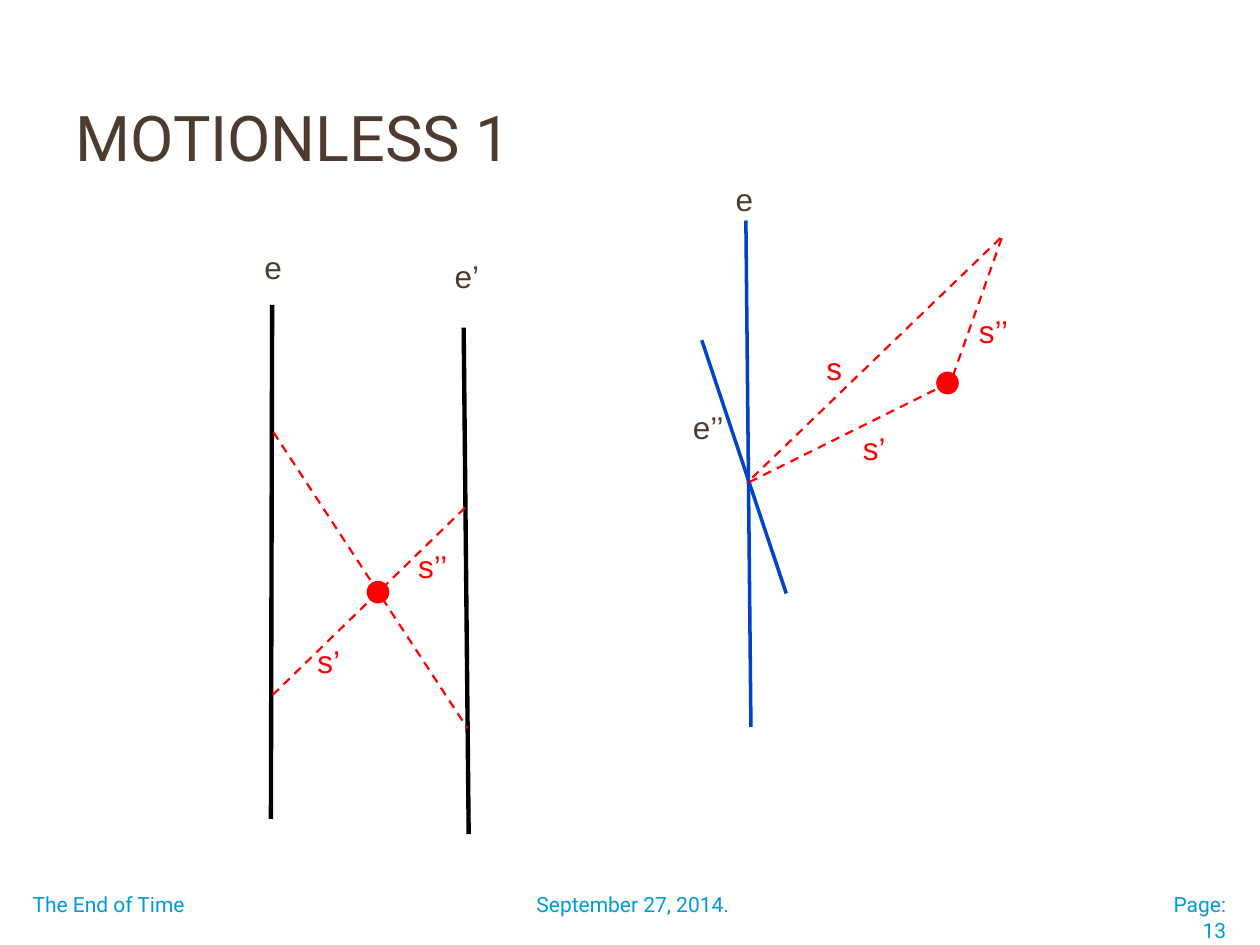
from typing import NamedTuple

from lxml import etree
from pptx import Presentation
from pptx.dml.color import RGBColor
from pptx.enum.dml import MSO_LINE
from pptx.enum.shapes import MSO_CONNECTOR, MSO_SHAPE
from pptx.enum.text import MSO_ANCHOR, PP_ALIGN
from pptx.oxml.ns import qn
from pptx.util import Inches, Pt

STRAIGHT = MSO_CONNECTOR.STRAIGHT
ELLIPSE = MSO_SHAPE.OVAL
DASH = MSO_LINE.DASH
LEFT, RIGHT = PP_ALIGN.LEFT, PP_ALIGN.RIGHT
MIDDLE, TOP = MSO_ANCHOR.MIDDLE, MSO_ANCHOR.TOP

COLORS = {"brown": "4E3B30", "sky": "009BD4", "red": "FF0000",
          "black": "000000", "blue": "0042C8"}

# The slide is a grid of 100 columns by 75 rows
COLUMNS, ROWS = 100, 75
CELL = Inches(0.1)
LABEL_WIDTH, LABEL_HEIGHT = 5.5, 4
DOT_SIZE = 1.8
FOOTER_TOP, FOOTER_HEIGHT = 70.3, 3.2


class LineStyle(NamedTuple):
    color: str
    width: float
    dashed: bool = False


class Segment(NamedTuple):
    style: LineStyle
    start: tuple[float, float]
    end: tuple[float, float]


class Label(NamedTuple):
    text: str
    column: float
    row: float
    color: str


class Footer(NamedTuple):
    text: str
    column: float
    width: float
    align: PP_ALIGN = LEFT


BLACK_EDGE = LineStyle("black", 2.5)
BLUE_EDGE = LineStyle("blue", 2)
SIGNAL = LineStyle("red", 1.25, dashed=True)

SEGMENTS = [
    # Left diagram: two edges and the crossing signals
    Segment(BLACK_EDGE, (21.6, 24.2), (21.5, 65)),
    Segment(BLACK_EDGE, (36.8, 26), (37.2, 66.2)),
    Segment(SIGNAL, (36.9, 40.3), (21.6, 55.2)),
    Segment(SIGNAL, (21.7, 34.3), (37.1, 57.8)),
    # Right diagram: crossing edges and the signal triangle
    Segment(BLUE_EDGE, (59.2, 17.5), (59.6, 57.7)),
    Segment(BLUE_EDGE, (55.7, 27), (62.4, 47.1)),
    Segment(SIGNAL, (79.5, 18.9), (75.5, 30.2)),
    Segment(SIGNAL, (75.3, 30.4), (59.4, 38.3)),
    Segment(SIGNAL, (79.4, 18.9), (59.3, 38.3)),
]
DOTS = [(29.1, 46.1), (74.3, 29.5)]
LABELS = [
    Label("e", 20, 19.2, "brown"),
    Label("e’", 35.1, 19.9, "brown"),
    Label("s’", 24.2, 50.5, "red"),
    Label("s’’", 32.2, 42.9, "red"),
    Label("e", 57.4, 13.8, "brown"),
    Label("e’’", 54, 31.9, "brown"),
    Label("s", 64.6, 27.2, "red"),
    Label("s’", 67.5, 33.6, "red"),
    Label("s’’", 76.7, 24.3, "red"),
]
FOOTERS = [
    Footer("The End of Time", 1.6, 39.1),
    Footer("September 27, 2014.", 41.6, 44.3),
    Footer("Page: 13", 90, 8.3, RIGHT),
]


def cells(*counts: float) -> list[int]:
    return [round(count * CELL) for count in counts]


def rgb(color: str) -> RGBColor:
    return RGBColor.from_string(COLORS[color])


def write(box, text: str, font: str, size: float, color: str,
          align: PP_ALIGN = LEFT, anchor: MSO_ANCHOR = TOP) -> None:
    frame = box.text_frame
    frame.text = text
    frame.word_wrap = True
    frame.vertical_anchor = anchor
    para = frame.paragraphs[0]
    para.alignment = align
    span = para.runs[0]
    span.font.name = font
    span.font.size = Pt(size)
    span.font.color.rgb = rgb(color)


def draw_segment(page, segment: Segment) -> None:
    line = page.shapes.add_connector(STRAIGHT, *cells(*segment.start, *segment.end))
    line.line.color.rgb = rgb(segment.style.color)
    line.line.width = Pt(segment.style.width)
    if segment.style.dashed:
        line.line.dash_style = DASH
    etree.SubElement(line._element.spPr, qn("a:effectLst"))


def draw_dot(page, column: float, row: float) -> None:
    dot = page.shapes.add_shape(ELLIPSE, *cells(column, row, DOT_SIZE, DOT_SIZE))
    dot.shadow.inherit = False
    dot.fill.solid()
    dot.fill.fore_color.rgb = rgb("red")
    dot.line.fill.background()


def draw_label(page, label: Label) -> None:
    box = page.shapes.add_textbox(
        *cells(label.column, label.row, LABEL_WIDTH, LABEL_HEIGHT))
    write(box, label.text, "Arial", 18, label.color)


def draw_footer(page, footer: Footer) -> None:
    box = page.shapes.add_textbox(
        *cells(footer.column, FOOTER_TOP, footer.width, FOOTER_HEIGHT))
    write(box, footer.text, "Roboto", 12, "sky", footer.align)


def main() -> None:
    deck = Presentation()
    deck.slide_width, deck.slide_height = cells(COLUMNS, ROWS)
    page = deck.slides.add_slide(deck.slide_layouts.get_by_name("Title Only"))

    # Title
    title = page.shapes.title
    title.left, title.top, title.width, title.height = cells(5, 4.6, 90.8, 12.5)
    write(title, "MOTIONLESS 1", "Roboto", 36, "brown", anchor=MIDDLE)

    # Diagrams
    for segment in SEGMENTS:
        draw_segment(page, segment)
    for column, row in DOTS:
        draw_dot(page, column, row)
    for label in LABELS:
        draw_label(page, label)

    # Footer line
    for footer in FOOTERS:
        draw_footer(page, footer)

    deck.save("out.pptx")


if __name__ == "__main__":
    main()
